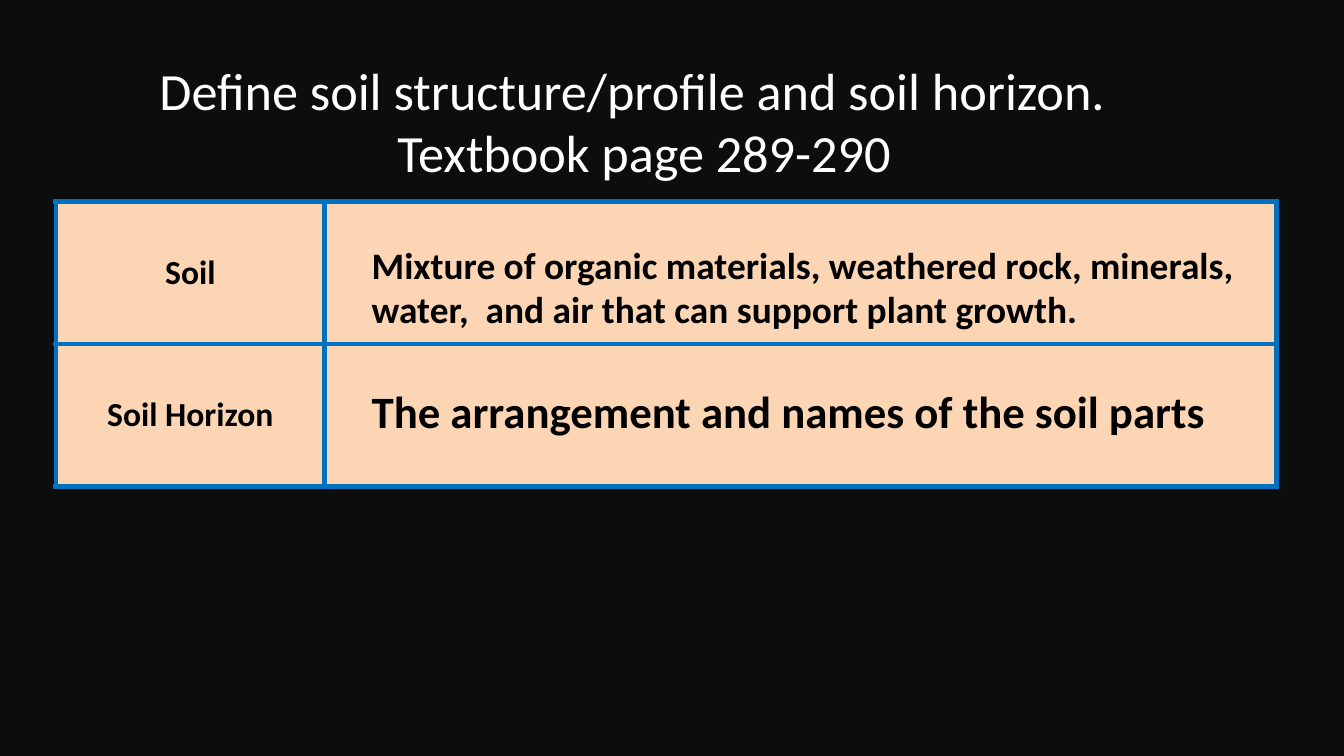
"""Build a slide that defines soil and soil horizon in a bordered table."""
from lxml.etree import SubElement
from pptx import Presentation
from pptx.dml.color import RGBColor
from pptx.enum.text import MSO_ANCHOR, PP_ALIGN
from pptx.oxml.ns import qn
from pptx.util import Pt


def paint(fill, color):
    fill.solid()
    fill.fore_color.rgb = RGBColor.from_string(color)


def write(para, text, color, align, style):
    para.text = text
    para.alignment = align
    font = para.runs[0].font
    for name, value in style.items():
        setattr(font, name, value)
    paint(font.fill, color)


deck = Presentation()
deck.slide_width, deck.slide_height = Pt(720), Pt(405)
slide = deck.slides.add_slide(deck.slide_layouts[6])
paint(slide.background.fill, "0D0D0D")

plain = {"name": "Calibri", "size": Pt(28), "bold": False}
terms = ["Soil", "Soil Horizon"]
title = ["Define soil structure/profile and soil horizon.  ", "Textbook page 289-290"]
soil = ["Mixture of organic materials, weathered rock, minerals, water,  and air that can support plant growth."]
layer = ["The arrangement and names of the soil parts"]

grid = slide.shapes.add_table(2, 2, Pt(30), Pt(108), Pt(654), Pt(152.6)).table
for col, width in zip(grid.columns, (144, 510)):
    col.width = Pt(width)
for row, term in zip(grid.rows, terms):
    row.height = Pt(76.3)
    label = row.cells[0]
    write(label.text_frame.paragraphs[0], term, "000000", PP_ALIGN.CENTER,
          {**plain, "size": Pt(18), "bold": True})
    for cell in row.cells:
        cell.vertical_anchor = MSO_ANCHOR.MIDDLE
        cell.margin_left = cell.margin_right = Pt(5)
        cell.margin_top = cell.margin_bottom = 0
        props = cell._tc.get_or_add_tcPr()
        for side in ("a:lnL", "a:lnR", "a:lnT", "a:lnB"):
            line = SubElement(props, qn(side), w=str(Pt(3)))
            tint = SubElement(line, qn("a:solidFill"))
            SubElement(tint, qn("a:srgbClr"), val="0070C0")
        paint(cell.fill, "FCD5B5")

boxes = [
    (title, (78, 27.4, 534, 75), "FFFFFF", PP_ALIGN.CENTER, {}),
    (soil, (192, 126, 480, 55.7), "000000", PP_ALIGN.LEFT, {"size": Pt(20), "bold": True}),
    (layer, (192, 202, 480, 36), "000000", PP_ALIGN.LEFT, {"size": Pt(24), "bold": True}),
]
for lines, place, color, align, style in boxes:
    frame = slide.shapes.add_textbox(*map(Pt, place)).text_frame
    frame.word_wrap = True
    for num, text in enumerate(lines):
        para = frame.add_paragraph() if num else frame.paragraphs[0]
        write(para, text, color, align, {**plain, **style})

deck.save("out.pptx")
